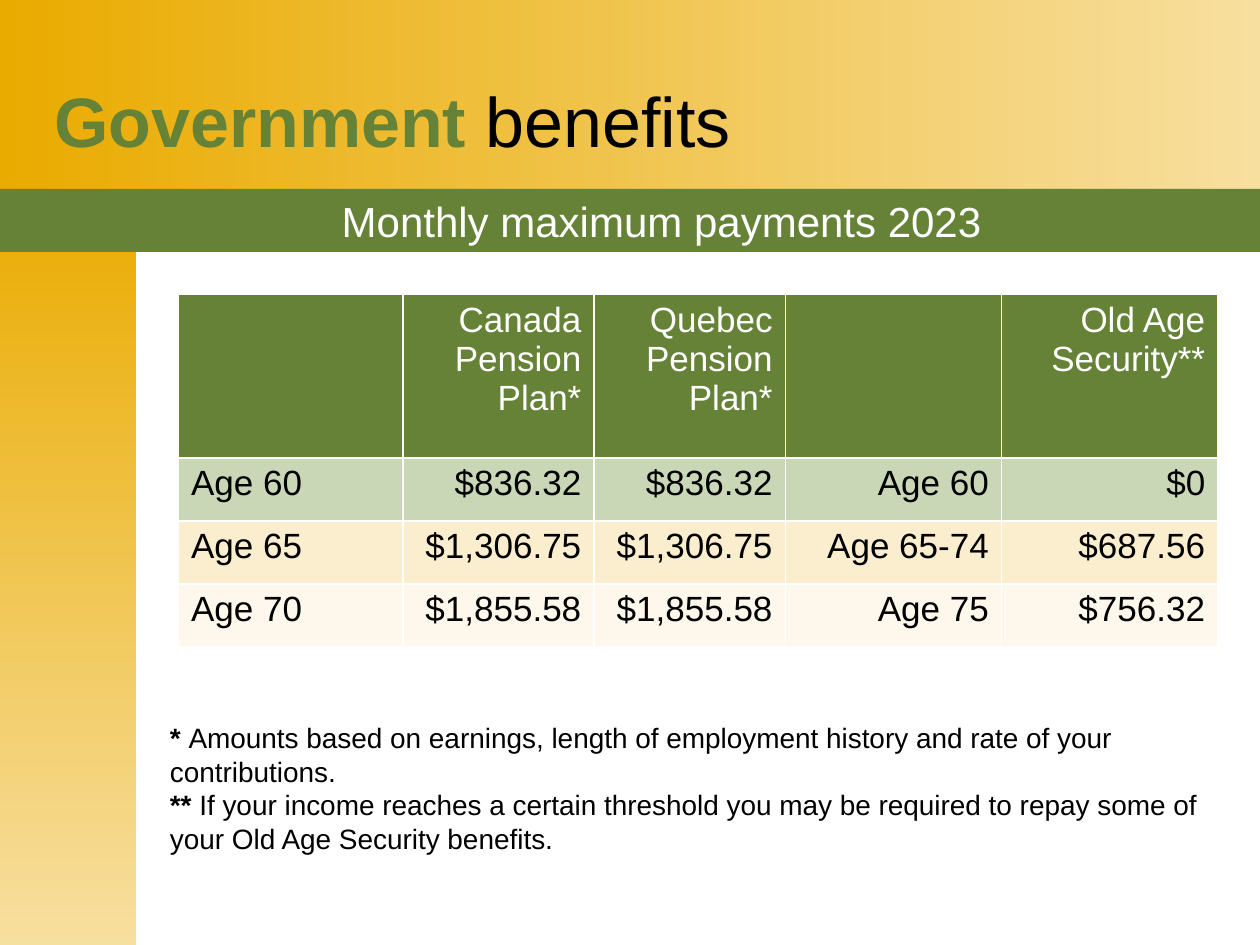
from dataclasses import dataclass

from lxml.etree import SubElement
from pptx import Presentation
from pptx.dml.color import RGBColor as Rgb
from pptx.enum.shapes import MSO_SHAPE as Kind
from pptx.enum.text import MSO_ANCHOR as Anchor, PP_ALIGN as Align
from pptx.oxml import parse_xml
from pptx.oxml.ns import nsdecls, qn
from pptx.util import Pt

GREEN = Rgb(0x65, 0x82, 0x37)
GOLD = Rgb(0xEA, 0xAB, 0x00)
SAND = Rgb(0xF7, 0xDF, 0x9F)
SAGE = Rgb(0x97, 0xB0, 0x71)
CREAM = Rgb(0xFC, 0xF3, 0xD8)
WHITE = Rgb(0xFF, 0xFF, 0xFF)
BLACK = Rgb(0x00, 0x00, 0x00)
FONT = "Arial"


@dataclass
class Box:
    left: float
    top: float
    width: float
    height: float

    def place(self) -> list:
        return [Pt(n) for n in (self.left, self.top, self.width, self.height)]


@dataclass
class Run:
    text: str
    color: Rgb = BLACK
    bold: bool = False


@dataclass
class Label:
    box: Box
    size: int
    lines: list[list[Run]]
    align: Align = Align.LEFT
    anchor: Anchor = Anchor.BOTTOM


@dataclass
class Band:
    box: Box
    angle: int | None = None


@dataclass
class Row:
    texts: list[str]
    fill: Rgb
    height: float = 36
    ink: Rgb = BLACK
    alpha: int = 50


BANDS = [
    Band(Box(0, 0, 720, 108), 0),
    Band(Box(0, 108, 78, 432), 270),
    Band(Box(0, 108, 720, 36)),
]

LABELS = [
    Label(Box(72, 108, 612, 36), 24,
          [[Run("Monthly maximum payments 2023", WHITE)]],
          Align.CENTER, Anchor.MIDDLE),
    Label(Box(90, 429, 612, 63), 16, [
        [Run("* ", bold=True),
         Run("Amounts based on earnings, length of employment history "
             "and rate of your contributions.")],
        [Run("** ", bold=True),
         Run("If your income reaches a certain threshold you may be required "
             "to repay some of your Old Age Security benefits.")],
    ]),
    Label(Box(24, 42, 612, 54), 40,
          [[Run("Government ", GREEN, True), Run("benefits")]]),
]

GRID = Box(102, 168, 594, 201.6)
COLS = [128.2, 109.3, 109.3, 123.6, 123.6]
ROWS = [
    Row(["", "Canada Pension Plan*", "Quebec Pension Plan*", "",
         "Old Age Security**"], GREEN, 93.6, WHITE, 100),
    Row(["Age 60", "$836.32", "$836.32", "Age 60", "$0"], SAGE),
    Row(["Age 65", "$1,306.75", "$1,306.75", "Age 65-74", "$687.56"], SAND),
    Row(["Age 70", "$1,855.58", "$1,855.58", "Age 75", "$756.32"], CREAM),
]


def add_run(para, run: Run, size: int) -> None:
    part = para.add_run()
    part.text = run.text
    font = part.font
    font.name, font.size, font.bold = FONT, Pt(size), run.bold
    font.color.rgb = run.color


def draw_band(slide, band: Band) -> None:
    shape = slide.shapes.add_shape(Kind.RECTANGLE, *band.box.place())
    shape.shadow.inherit = False
    shape.line.fill.background()
    if band.angle is None:
        shape.fill.solid()
        shape.fill.fore_color.rgb = GREEN
        return
    shape.fill.gradient()
    shape.fill.gradient_angle = band.angle
    for stop, color in zip(shape.fill.gradient_stops, (GOLD, SAND)):
        stop.color.rgb = color


def draw_label(slide, label: Label) -> None:
    frame = slide.shapes.add_textbox(*label.box.place()).text_frame
    frame.word_wrap = True
    frame.vertical_anchor = label.anchor
    for i, line in enumerate(label.lines):
        para = frame.add_paragraph() if i else frame.paragraphs[0]
        para.alignment = label.align
        for run in line:
            add_run(para, run, label.size)


def style_cell(cell, row: Row) -> None:
    cell.fill.solid()
    cell.fill.fore_color.rgb = row.fill
    props = cell._tc.get_or_add_tcPr()
    if row.alpha < 100:
        tint = props.find(qn("a:solidFill"))[0]
        SubElement(tint, qn("a:alpha"), val=str(row.alpha * 1000))
    for i, side in enumerate("LRTB"):
        props.insert(i, parse_xml(
            f'<a:ln{side} {nsdecls("a")} w="{Pt(1)}"><a:solidFill>'
            f'<a:srgbClr val="{WHITE}"/></a:solidFill></a:ln{side}>'))


def draw_table(slide, rows: list[Row]) -> None:
    frame = slide.shapes.add_table(len(rows), len(COLS), *GRID.place())
    table = frame.table
    for col, width in zip(table.columns, COLS):
        col.width = Pt(width)
    for r, row in enumerate(rows):
        table.rows[r].height = Pt(row.height)
        for c, text in enumerate(row.texts):
            cell = table.cell(r, c)
            style_cell(cell, row)
            para = cell.text_frame.paragraphs[0]
            para.alignment = Align.RIGHT if c else Align.LEFT
            if text:
                add_run(para, Run(text, row.ink), 20)


def main() -> None:
    deck = Presentation()
    deck.slide_width, deck.slide_height = Pt(720), Pt(540)
    slide = deck.slides.add_slide(deck.slide_layouts[6])
    for band in BANDS:
        draw_band(slide, band)
    for label in LABELS:
        draw_label(slide, label)
    draw_table(slide, ROWS)
    deck.save("out.pptx")


if __name__ == "__main__":
    main()
